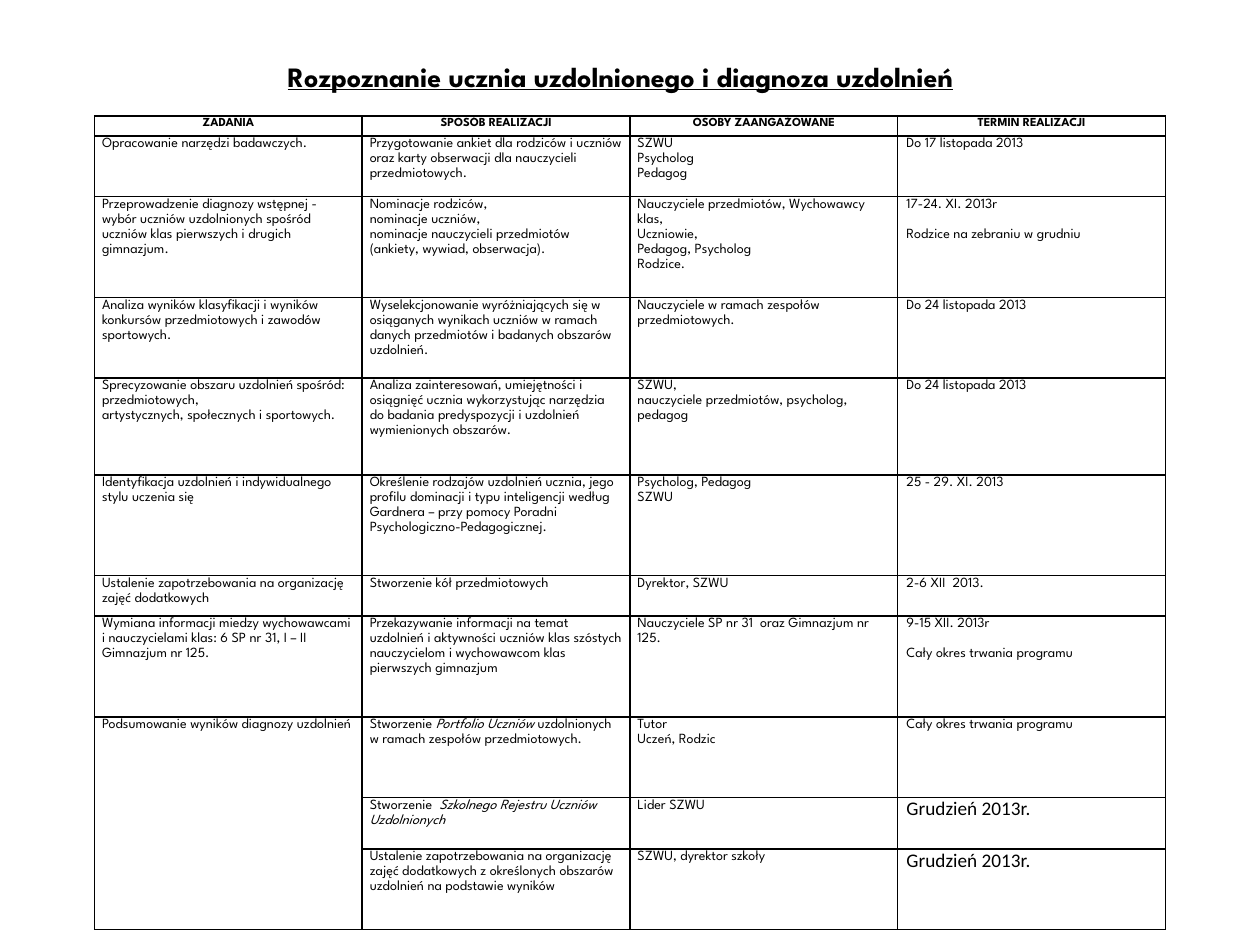
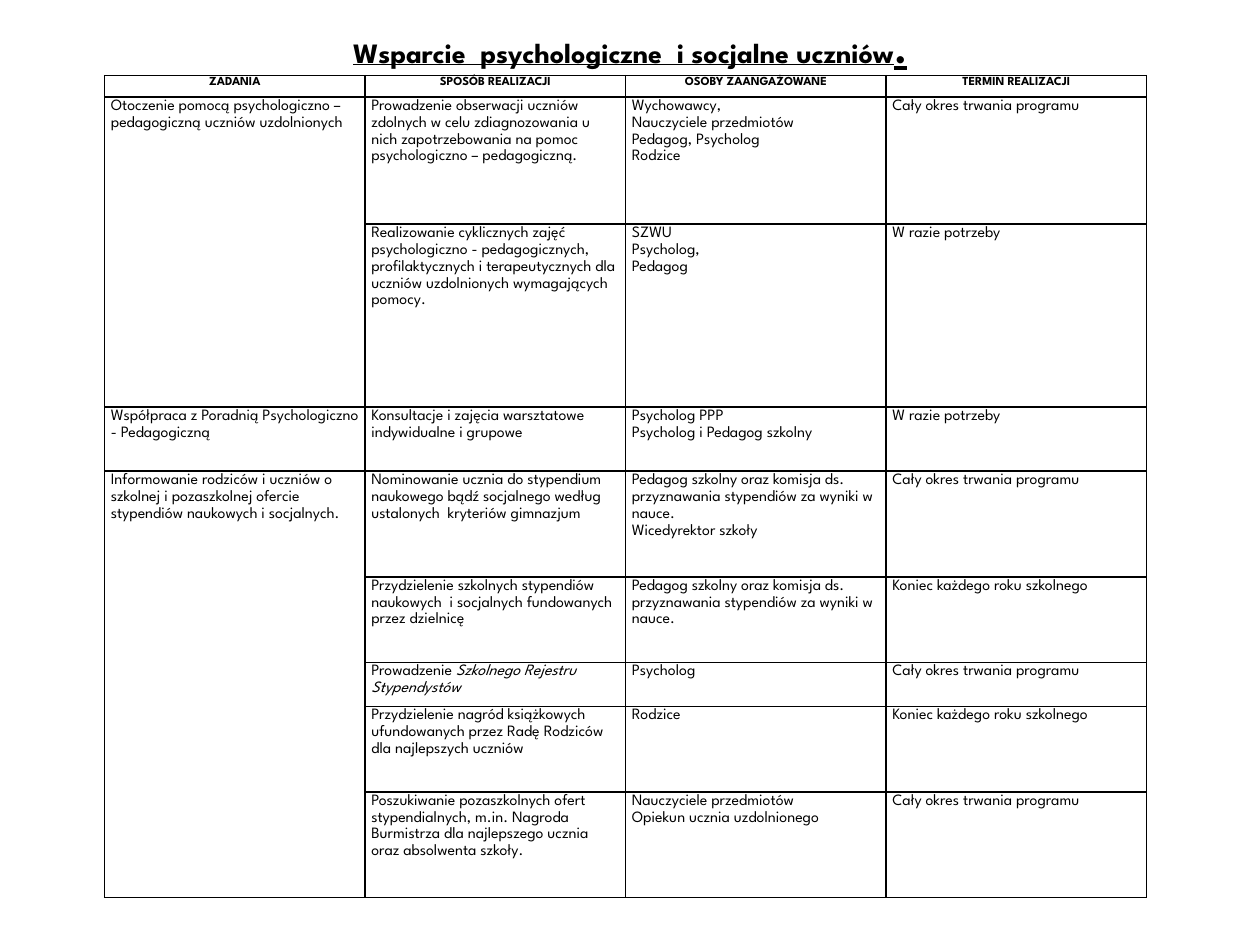
from pptx import Presentation
from pptx.dml.color import RGBColor
from pptx.enum.text import MSO_ANCHOR, PP_ALIGN
from pptx.oxml import parse_xml
from pptx.oxml.ns import nsdecls
from pptx.util import Inches, Pt

MAIN, PLAIN = "League Spartan", "Calibri"
THEME = {
    "ink": RGBColor(0, 0, 0),
    "paper": RGBColor(255, 255, 255),
    "rule": 1,
    "title": {"name": MAIN, "size": Pt(16), "bold": True, "underline": True},
    "stop": {"name": PLAIN, "size": Pt(28), "bold": True, "underline": True},
    "header": {"name": MAIN, "size": Pt(7), "bold": True},
    "small": {"name": MAIN, "size": Pt(8), "bold": False},
    "medium": {"name": MAIN, "size": Pt(9), "bold": False},
    "date": {"name": PLAIN, "size": Pt(11), "bold": False},
}
LINE_SPACING = 1.15
GAP = Pt(8.5)
HEADINGS = ("ZADANIA", "SPOSÓB REALIZACJI", "OSOBY ZAANGAŻOWANE", "TERMIN REALIZACJI")
WHOLE_PROGRAMME = "Cały okres trwania programu"
AS_NEEDED = "W razie potrzeby"
YEAR_END = "Koniec każdego roku szkolnego"
GRANT_BOARD = "Pedagog szkolny oraz komisja ds. przyznawania stypendiów za wyniki w nauce."
DECEMBER = ("Grudzień 2013r.", "date")

DIAGNOSIS = [
    (0.48, "Opracowanie narzędzi badawczych.",
     "Przygotowanie ankiet dla rodziców i uczniów oraz karty obserwacji dla nauczycieli przedmiotowych.",
     "SZWU\nPsycholog\nPedagog", "Do 17 listopada 2013"),
    (0.8, "Przeprowadzenie diagnozy wstępnej - wybór uczniów uzdolnionych spośród uczniów klas pierwszych i drugich gimnazjum.",
     "Nominacje rodziców,\nnominacje uczniów,\nnominacje nauczycieli przedmiotów (ankiety, wywiad, obserwacja).",
     "Nauczyciele przedmiotów, Wychowawcy klas,\nUczniowie,\nPedagog, Psycholog\nRodzice.",
     "17-24. XI. 2013r\n\nRodzice na zebraniu w grudniu"),
    (0.64, "Analiza wyników klasyfikacji i wyników konkursów przedmiotowych i zawodów sportowych.",
     "Wyselekcjonowanie wyróżniających się w osiąganych wynikach uczniów w ramach danych przedmiotów i badanych obszarów uzdolnień.",
     "Nauczyciele w ramach zespołów przedmiotowych.", "Do 24 listopada 2013"),
    (0.77, "Sprecyzowanie obszaru uzdolnień spośród: przedmiotowych,\nartystycznych, społecznych i sportowych.",
     "Analiza zainteresowań, umiejętności i osiągnięć ucznia wykorzystując narzędzia do badania predyspozycji i uzdolnień wymienionych obszarów.",
     "SZWU,\nnauczyciele przedmiotów, psycholog, pedagog", "Do 24 listopada 2013"),
    (0.8, "Identyfikacja uzdolnień i indywidualnego stylu uczenia się",
     "Określenie rodzajów uzdolnień ucznia, jego profilu dominacji i typu inteligencji według Gardnera – przy pomocy Poradni Psychologiczno-Pedagogicznej.",
     "Psycholog, Pedagog\nSZWU", "25 - 29. XI. 2013"),
    (0.32, "Ustalenie zapotrzebowania na organizację zajęć dodatkowych",
     "Stworzenie kół przedmiotowych", "Dyrektor, SZWU", "2-6 XII  2013."),
    (0.8, "Wymiana informacji miedzy wychowawcami i nauczycielami klas: 6 SP nr 31, I – II Gimnazjum nr 125.",
     "Przekazywanie informacji na temat uzdolnień i aktywności uczniów klas szóstych nauczycielom i wychowawcom klas pierwszych gimnazjum",
     "Nauczyciele SP nr 31  oraz Gimnazjum nr 125.", "9-15 XII. 2013r\n\n" + WHOLE_PROGRAMME),
    (0.64, "Podsumowanie wyników diagnozy uzdolnień",
     "Stworzenie *Portfolio Uczniów* uzdolnionych w ramach zespołów przedmiotowych.",
     "Tutor\nUczeń, Rodzic", WHOLE_PROGRAMME),
    (0.41, None, "Stworzenie  *Szkolnego Rejestru Uczniów Uzdolnionych*", "Lider SZWU", DECEMBER),
    (0.64, None, "Ustalenie zapotrzebowania na organizację zajęć dodatkowych z określonych obszarów uzdolnień na podstawie wyników",
     "SZWU, dyrektor szkoły", DECEMBER),
]
SUPPORT = [
    (1.01, "Otoczenie pomocą psychologiczno – pedagogiczną uczniów uzdolnionych",
     "Prowadzenie obserwacji uczniów zdolnych w celu zdiagnozowania u nich zapotrzebowania na pomoc psychologiczno – pedagogiczną.",
     "Wychowawcy,\nNauczyciele przedmiotów\nPedagog, Psycholog\nRodzice", WHOLE_PROGRAMME),
    (1.45, None, "Realizowanie cyklicznych zajęć psychologiczno - pedagogicznych, profilaktycznych i terapeutycznych dla uczniów uzdolnionych wymagających pomocy.",
     "SZWU\nPsycholog,\nPedagog", AS_NEEDED),
    (0.51, "Współpraca z Poradnią Psychologiczno - Pedagogiczną",
     "Konsultacje i zajęcia warsztatowe indywidualne i grupowe",
     "Psycholog PPP\nPsycholog i Pedagog szkolny", AS_NEEDED),
    (0.84, "Informowanie rodziców i uczniów o szkolnej i pozaszkolnej ofercie stypendiów naukowych i socjalnych.",
     "Nominowanie ucznia do stypendium naukowego bądź socjalnego według ustalonych  kryteriów gimnazjum",
     GRANT_BOARD + "\nWicedyrektor szkoły", WHOLE_PROGRAMME),
    (0.68, None, "Przydzielenie szkolnych stypendiów naukowych  i socjalnych fundowanych przez dzielnicę",
     GRANT_BOARD, YEAR_END),
    (0.34, None, "Prowadzenie *Szkolnego Rejestru Stypendystów*", "Psycholog", WHOLE_PROGRAMME),
    (0.68, None, "Przydzielenie nagród książkowych ufundowanych przez Radę Rodziców dla najlepszych uczniów",
     "Rodzice", YEAR_END),
    (0.84, None, "Poszukiwanie pozaszkolnych ofert stypendialnych, m.in. Nagroda Burmistrza dla najlepszego ucznia oraz absolwenta szkoły.",
     "Nauczyciele przedmiotów\nOpiekun ucznia uzdolnionego", WHOLE_PROGRAMME),
]
PLANS = [
    {"title": [("Rozpoznanie ucznia uzdolnionego i diagnoza uzdolnień", "title")],
     "title_box": (0.98, 0.29, 7.89, 0.63), "origin": (0.75, 0.92), "width": 8.5,
     "header_height": 0.16, "insets": (0.06, 0.06, 0.06, 0.07), "text": "small", "tasks": DIAGNOSIS},
    {"title": [("Wsparcie  psychologiczne  i socjalne uczniów", "title"), (".", "stop")],
     "title_box": (0.5, 0.09, 9, 0.51), "origin": (0.83, 0.6), "width": 8.27,
     "header_height": 0.17, "insets": (0.05,) * 4, "text": "medium", "tasks": SUPPORT},
]


def apply(target, values):
    for attribute, value in values.items():
        setattr(target, attribute, value)


def add_run(paragraph, words, style, italic=False):
    run = paragraph.add_run()
    run.text = words
    apply(run.font, {**THEME[style], "italic": italic})
    run.font.color.rgb = THEME["ink"]


def write(cell, content, style, align):
    if isinstance(content, tuple):
        content, style = content
    paragraph = None
    for block in content.split("\n\n"):
        for position, line in enumerate(block.split("\n")):
            follows_gap = paragraph is not None and position == 0
            paragraph = cell.text_frame.add_paragraph() if paragraph else cell.text_frame.paragraphs[0]
            paragraph.alignment = align
            if style != "date":
                paragraph.line_spacing = LINE_SPACING
            if follows_gap:
                paragraph.space_before = GAP
            for part, words in enumerate(line.split("*")):
                if words:
                    add_run(paragraph, words, style, part % 2 == 1)


def frame(cell, inset):
    apply(cell, {"margin_left": Inches(inset), "margin_right": Inches(inset),
                 "margin_top": 0, "margin_bottom": 0, "vertical_anchor": MSO_ANCHOR.TOP})
    properties = cell._tc.get_or_add_tcPr()
    for edge in ("lnL", "lnR", "lnT", "lnB"):
        properties.append(parse_xml(
            f'<a:{edge} {nsdecls("a")} w="{Pt(THEME["rule"])}"><a:solidFill>'
            f'<a:srgbClr val="{THEME["ink"]}"/></a:solidFill></a:{edge}>'))
    cell.fill.solid()
    cell.fill.fore_color.rgb = THEME["paper"]


def add_title(slide, plan):
    title = slide.shapes.add_textbox(*map(Inches, plan["title_box"])).text_frame
    apply(title, {"word_wrap": True, "vertical_anchor": MSO_ANCHOR.MIDDLE})
    title.paragraphs[0].alignment = PP_ALIGN.CENTER
    for words, style in plan["title"]:
        add_run(title.paragraphs[0], words, style)


def add_schedule(slide, plan):
    rows = [(plan["header_height"], *HEADINGS), *plan["tasks"]]
    height = sum(row[0] for row in rows)
    left, top = plan["origin"]
    schedule = slide.shapes.add_table(len(rows), len(HEADINGS), Inches(left), Inches(top),
                                      Inches(plan["width"]), Inches(height)).table
    apply(schedule, {"first_row": False, "horz_banding": False})
    for column in schedule.columns:
        column.width = Inches(plan["width"] / len(HEADINGS))
    for index, (row_height, *contents) in enumerate(rows):
        schedule.rows[index].height = Inches(row_height)
        style, align = (plan["text"], PP_ALIGN.LEFT) if index else ("header", PP_ALIGN.CENTER)
        for column, content in enumerate(contents):
            cell = schedule.cell(index, column)
            frame(cell, plan["insets"][column])
            if content:
                write(cell, content, style, align)
    starts = [index for index, row in enumerate(rows) if row[1]] + [len(rows)]
    for first, following in zip(starts, starts[1:]):
        if following - first > 1:
            schedule.cell(first, 0).merge(schedule.cell(following - 1, 0))


def main():
    deck = Presentation()
    apply(deck, {"slide_width": Inches(10), "slide_height": Inches(7.5)})
    for plan in PLANS:
        slide = deck.slides.add_slide(deck.slide_layouts[6])
        add_title(slide, plan)
        add_schedule(slide, plan)
    deck.save("out.pptx")


if __name__ == "__main__":
    main()
